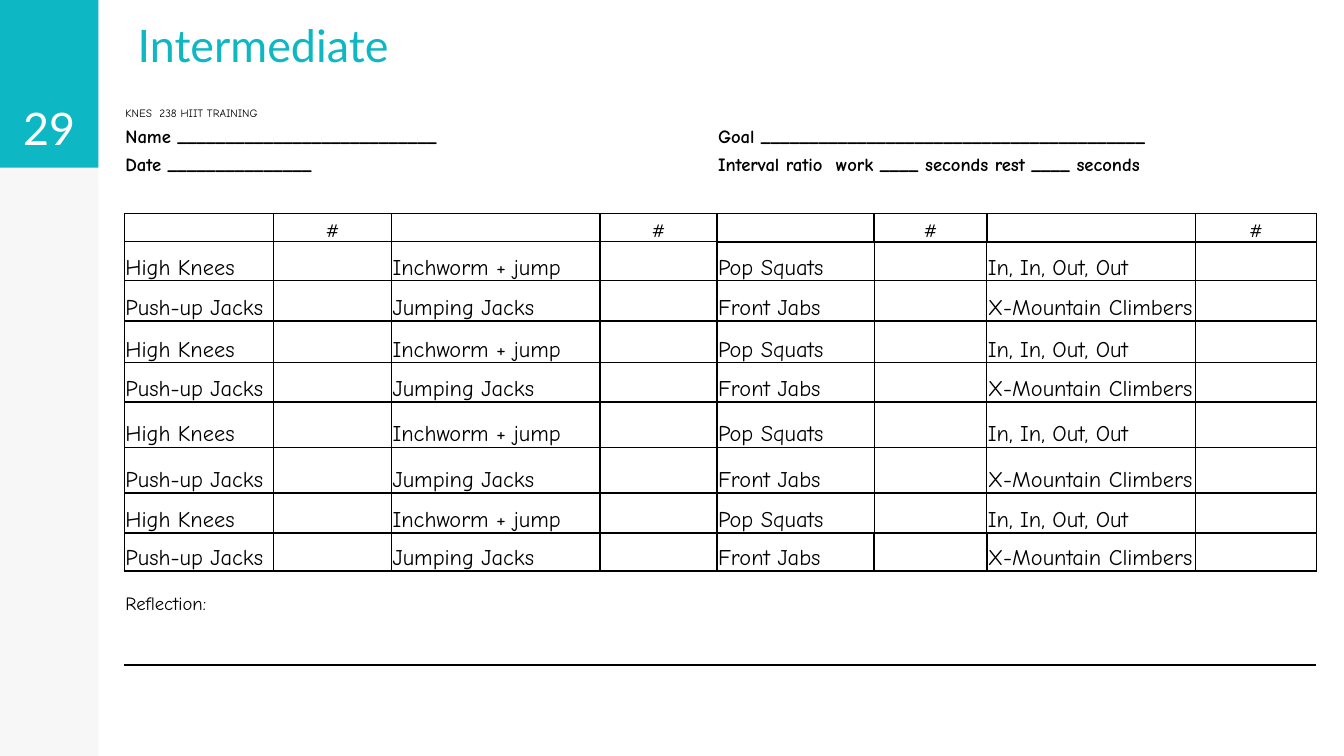
import pptx
import pptx.dml.color
import pptx.enum.shapes
import pptx.enum.text
import pptx.oxml
import pptx.oxml.ns
import pptx.util
from lxml import etree

Cm = pptx.util.Cm
Pt = pptx.util.Pt
ANCHOR = pptx.enum.text.MSO_ANCHOR
ALIGN = pptx.enum.text.PP_ALIGN

COLORS = {"teal": "0DB7C4", "black": "000000", "white": "FFFFFF"}
HEADING_FONT = "Lato"
SHEET_FONT = "Comic Neue"
NO_GRID_STYLE = "{2D5ABB26-0587-4C30-8999-92F81FD0307C}"

COLUMN_WIDTHS = [2.82, 2.23, 3.94, 2.21, 2.97, 2.13, 3.94, 2.29]
ROW_HEIGHTS = [0.69, 0.53, 0.53, 0.71, 0.53, 0.74, 0.76, 0.79,
               0.74, 0.86, 0.86, 0.76, 0.71, 1.78, 0.66]
HEADER_ROW, LAST_EXERCISE_ROW, REFLECTION_ROW = 4, 12, 13
EXERCISES = [
    ["High Knees", "Inchworm + jump", "Pop Squats", "In, In, Out, Out"],
    ["Push-up Jacks", "Jumping Jacks", "Front Jabs", "X-Mountain Climbers"],
]
FORM_FIELDS = [
    (0, 0, "KNES  238 HIIT TRAINING", 6, False),
    (1, 0, "Name " + "_" * 27, 10, True),
    (1, 4, "Goal " + "_" * 40, 10, True),
    (2, 0, "Date " + "_" * 15, 10, True),
    (2, 4, "Interval ratio  work ____ seconds rest ____ seconds", 10, True),
]


def rgb(name):
    return pptx.dml.color.RGBColor.from_string(COLORS[name])


def write(frame, text, size, font, color, bold=False, align=ALIGN.LEFT):
    frame.text = text
    para = frame.paragraphs[0]
    para.alignment = align
    for span in para.runs:
        span.font.size = Pt(size)
        span.font.name = font
        span.font.bold = bold
        span.font.color.rgb = rgb(color)


def add_panel(page, box, color, opacity=100):
    panel = page.shapes.add_shape(pptx.enum.shapes.MSO_SHAPE.RECTANGLE, *box)
    panel.shadow.inherit = False
    panel.line.fill.background()
    panel.fill.solid()
    panel.fill.fore_color.rgb = rgb(color)
    if opacity < 100:
        tint = panel._element.spPr.find(".//" + pptx.oxml.ns.qn("a:srgbClr"))
        etree.SubElement(tint, pptx.oxml.ns.qn("a:alpha"), val=str(opacity * 1000))
    return panel


def add_sidebar(page, box, number):
    left, top, width, height = box
    add_panel(page, box, "black", opacity=3)
    badge = add_panel(page, (left, top, width, Cm(3.17)), "teal")
    frame = badge.text_frame
    frame.margin_left = frame.margin_right = Cm(0.25)
    frame.margin_top = frame.margin_bottom = Cm(0.25)
    frame.vertical_anchor = ANCHOR.BOTTOM
    write(frame, number, 24, HEADING_FONT, "white", align=ALIGN.CENTER)


def place_title(page, box, text):
    title = page.shapes.title
    title.left, title.top, title.width, title.height = box
    frame = title.text_frame
    frame.auto_size = pptx.enum.text.MSO_AUTO_SIZE.NONE
    frame.margin_left = frame.margin_right = Cm(0.25)
    frame.margin_top = frame.margin_bottom = Cm(0.25)
    frame.vertical_anchor = ANCHOR.BOTTOM
    write(frame, text, 24, HEADING_FONT, "teal")


def set_border(cell, side, points):
    line = pptx.oxml.parse_xml(
        f'<a:ln{side} {pptx.oxml.ns.nsdecls("a")} w="{Pt(points)}">'
        f'<a:solidFill><a:srgbClr val="{COLORS["black"]}"/></a:solidFill></a:ln{side}>'
    )
    cell._tc.get_or_add_tcPr().append(line)


def draw_borders(cell, row, column):
    if HEADER_ROW <= row <= LAST_EXERCISE_ROW:
        heavy = row == LAST_EXERCISE_ROW or (row == HEADER_ROW and column >= 4)
        for side in "LRTB":
            set_border(cell, side, 1 if heavy else 0.75)
    elif row == HEADER_ROW - 1:
        set_border(cell, "B", 0.75 if column == 3 else 1)
    elif row == REFLECTION_ROW:
        set_border(cell, "T", 1)


def prepare_cell(cell, row, column):
    draw_borders(cell, row, column)
    cell.fill.background()
    cell.margin_left = cell.margin_right = cell.margin_top = Cm(0.02)
    cell.margin_bottom = 0
    cell.vertical_anchor = ANCHOR.BOTTOM
    cell.text_frame.paragraphs[0]._p.get_or_add_endParaRPr().set("sz", "600")


def merge_form_cells(table):
    for row in range(HEADER_ROW):
        table.cell(row, 0).merge(table.cell(row, 2))
        if row > 0:
            table.cell(row, 4).merge(table.cell(row, 7))
    for row in (REFLECTION_ROW, REFLECTION_ROW + 1):
        table.cell(row, 0).merge(table.cell(row, 7))


def add_workout_sheet(page, box):
    table = page.shapes.add_table(len(ROW_HEIGHTS), len(COLUMN_WIDTHS), *box).table
    table.first_row = table.horz_banding = False
    table._tbl.tblPr.find(pptx.oxml.ns.qn("a:tableStyleId")).text = NO_GRID_STYLE
    for column, width in zip(table.columns, COLUMN_WIDTHS):
        column.width = Cm(width)
    for row, height in zip(table.rows, ROW_HEIGHTS):
        row.height = Cm(height)
    for row in range(len(ROW_HEIGHTS)):
        for column in range(len(COLUMN_WIDTHS)):
            prepare_cell(table.cell(row, column), row, column)
    merge_form_cells(table)

    def fill_cell(row, column, text, size, bold=False, align=ALIGN.LEFT):
        frame = table.cell(row, column).text_frame
        write(frame, text, size, SHEET_FONT, "black", bold, align)

    for field in FORM_FIELDS:
        fill_cell(*field)
    for column in range(1, 8, 2):
        fill_cell(HEADER_ROW, column, "#", 10, align=ALIGN.CENTER)
    for row in range(HEADER_ROW + 1, LAST_EXERCISE_ROW + 1):
        names = EXERCISES[(row - HEADER_ROW - 1) % 2]
        for index, name in enumerate(names):
            fill_cell(row, index * 2, name, 12)
    reflection = table.cell(REFLECTION_ROW, 0)
    reflection.vertical_anchor = ANCHOR.TOP
    reflection.margin_top = Cm(0.43)
    fill_cell(REFLECTION_ROW, 0, "Reflection:", 10)


def main():
    deck = pptx.Presentation()
    deck.slide_width, deck.slide_height = Cm(25.4), Cm(14.29)
    page = deck.slides.add_slide(deck.slide_layouts[5])
    add_sidebar(page, (0, 0, Cm(1.86), deck.slide_height), "29")
    place_title(page, (Cm(2.35), Cm(-1.57), Cm(9.88), Cm(3.17)), "Intermediate")
    add_workout_sheet(page, (Cm(2.35), Cm(1.58), Cm(22.53), Cm(sum(ROW_HEIGHTS))))
    deck.save("out.pptx")


if __name__ == "__main__":
    main()
